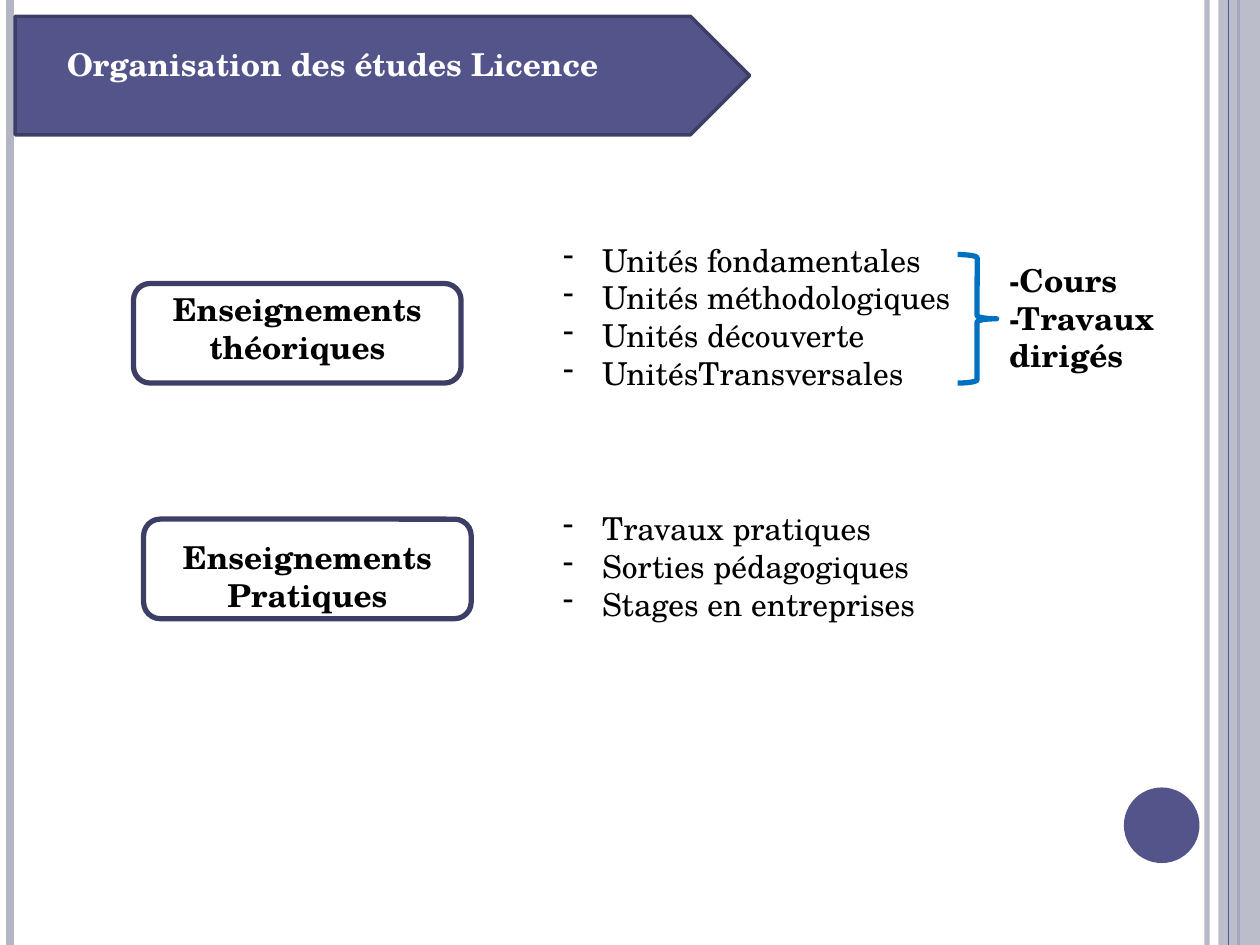
from lxml.etree import SubElement
from pptx import Presentation
from pptx.dml.color import RGBColor
from pptx.enum.shapes import MSO_CONNECTOR, MSO_SHAPE
from pptx.enum.text import MSO_ANCHOR, PP_ALIGN
from pptx.oxml.ns import qn
from pptx.util import Inches, Pt

INDIGO = RGBColor(0x53, 0x54, 0x8A)
NAVY = RGBColor(0x3D, 0x3E, 0x66)
GREY = RGBColor(0xB3, 0xB4, 0xC4)
BLUE = RGBColor(0x00, 0x70, 0xC0)
BLACK = RGBColor(0, 0, 0)
WHITE = RGBColor(255, 255, 255)
FONT = "TeX Gyre Schola"
SLIDE_W, SLIDE_H = 10, 7.5

TITLE = "Organisation des études Licence"
TITLE_BOX = (0.43, 0.31, 5.04, 0.4)

# x, colour, width in points, opacity in percent
RULES = [(9.58, GREY, 3, 93), (0.08, GREY, 4.5, 100), (9.83, INDIGO, 1.5, 100)]
TOP_RULE = (9.75, INDIGO, 0.75, 100)

# preset, box, fill, line colour, line width
SIDE_BAND = (MSO_SHAPE.RECTANGLE, (9.67, 0, 0.33, SLIDE_H), GREY, None, 0)
SHAPES = [
    (MSO_SHAPE.OVAL, (8.92, 6.25, 0.6, 0.6), INDIGO, None, 0),
    (MSO_SHAPE.ROUNDED_RECTANGLE, (1.06, 2.25, 2.6, 0.79), None, NAVY, 3),
    (MSO_SHAPE.ROUNDED_RECTANGLE, (1.14, 4.12, 2.6, 0.79), None, NAVY, 3),
    (MSO_SHAPE.RIGHT_BRACE, (7.6, 2.02, 0.31, 1.02), None, BLUE, 3),
    (MSO_SHAPE.PENTAGON, (0.12, 0.13, 5.83, 0.94), INDIGO, NAVY, 2),
]

# box, paragraphs, format
HEADING = {"bold": True, "align": PP_ALIGN.CENTER}
LIST = {"bullet": "-"}
TEXTS = [
    ((1.14, 2.25, 2.44, 0.71), ["Enseignements théoriques"], HEADING),
    ((4.37, 1.86, 4.49, 1.31),
     ["Unités fondamentales", "Unités méthodologiques",
      "Unités découverte", "UnitésTransversales"], LIST),
    ((7.91, 2.02, 1.61, 1.01), ["-Cours", "-Travaux dirigés"], {"bold": True}),
    ((1.3, 4.22, 2.28, 0.71), ["Enseignements Pratiques"], HEADING),
    ((4.37, 3.99, 3.7, 1.01),
     ["Travaux pratiques", "Sorties pédagogiques", "Stages en entreprises"], LIST),
]


def set_opacity(color_format_owner, percent):
    if percent < 100:
        for color in color_format_owner.iter(qn("a:srgbClr")):
            SubElement(color, qn("a:alpha"), val=str(percent * 1000))


def add_rule(s, x, color, width, opacity):
    line = s.shapes.add_connector(
        MSO_CONNECTOR.STRAIGHT, Inches(x), 0, Inches(x), Inches(SLIDE_H))
    line.line.color.rgb = color
    line.line.width = Pt(width)
    set_opacity(line._element.spPr, opacity)
    SubElement(line._element.spPr, qn("a:effectLst"))


def add_shape(s, preset, box, fill, line, width):
    sp = s.shapes.add_shape(preset, *map(Inches, box))
    sp.shadow.inherit = False
    if fill is None:
        sp.fill.background()
    else:
        sp.fill.solid()
        sp.fill.fore_color.rgb = fill
    if line is None:
        sp.line.fill.background()
    else:
        sp.line.color.rgb = line
        sp.line.width = Pt(width)
    return sp


def fill_text(sp, lines, color=BLACK, bold=False, align=PP_ALIGN.LEFT, bullet=None):
    tf = sp.text_frame
    tf.word_wrap = True
    tf.vertical_anchor = MSO_ANCHOR.TOP
    for i, text in enumerate(lines):
        p = tf.add_paragraph() if i else tf.paragraphs[0]
        p.alignment = align
        if bullet:
            pPr = p._p.get_or_add_pPr()
            indent = Inches(0.31)
            pPr.set("marL", str(indent))
            pPr.set("indent", str(-indent))
            SubElement(pPr, qn("a:buChar"), char=bullet)
        r = p.add_run()
        r.text = text
        for name, value in {"name": FONT, "size": Pt(18), "bold": bold}.items():
            setattr(r.font, name, value)
        r.font.color.rgb = color


def main():
    prs = Presentation()
    prs.slide_width, prs.slide_height = Inches(SLIDE_W), Inches(SLIDE_H)
    s = prs.slides.add_slide(prs.slide_layouts[5])

    for rule in RULES:
        add_rule(s, *rule)
    band = add_shape(s, *SIDE_BAND)
    set_opacity(band._element.spPr, 87)
    add_rule(s, *TOP_RULE)
    for shape in SHAPES:
        banner = add_shape(s, *shape)

    title = s.shapes.title
    for name, value in zip(("left", "top", "width", "height"), TITLE_BOX):
        setattr(title, name, Inches(value))
    fill_text(title, [TITLE], WHITE, bold=True)
    banner._element.addnext(title._element)  # the title sits on the banner

    for box, lines, fmt in TEXTS:
        fill_text(s.shapes.add_textbox(*map(Inches, box)), lines, **fmt)

    prs.save("out.pptx")


if __name__ == "__main__":
    main()
